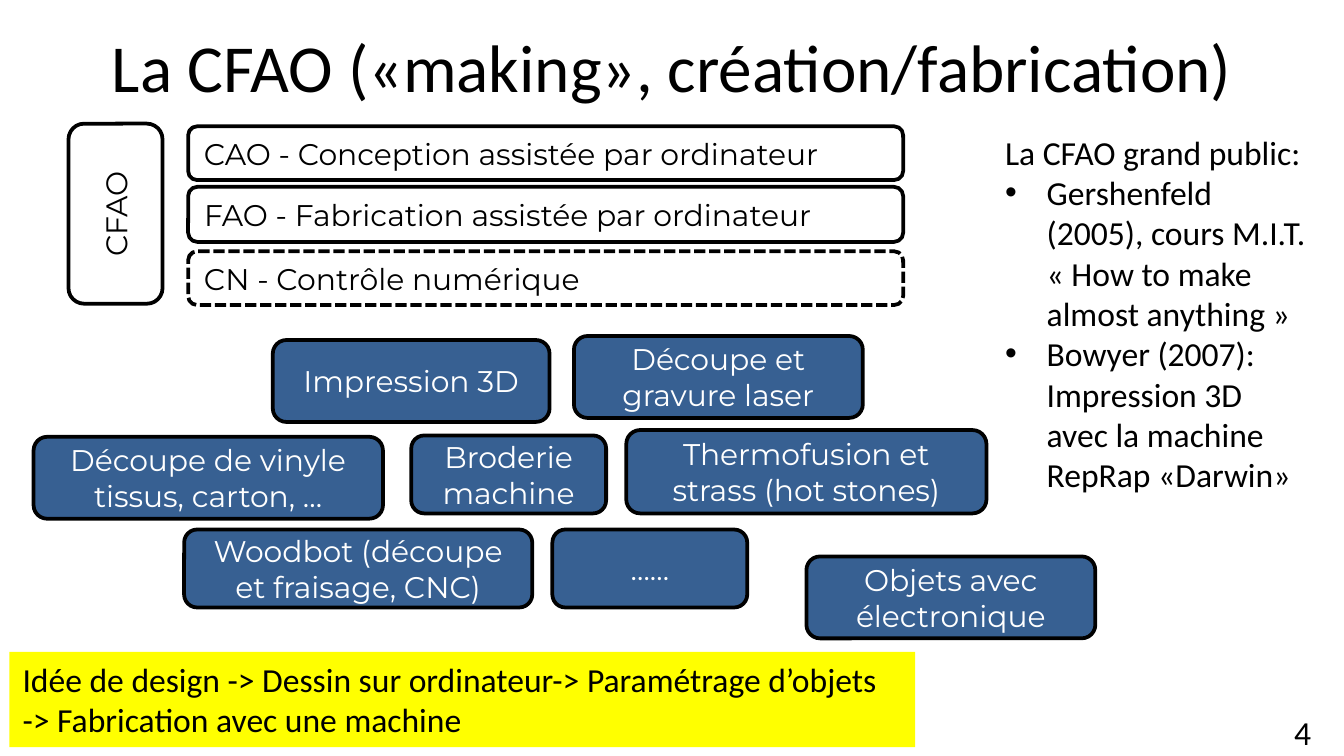
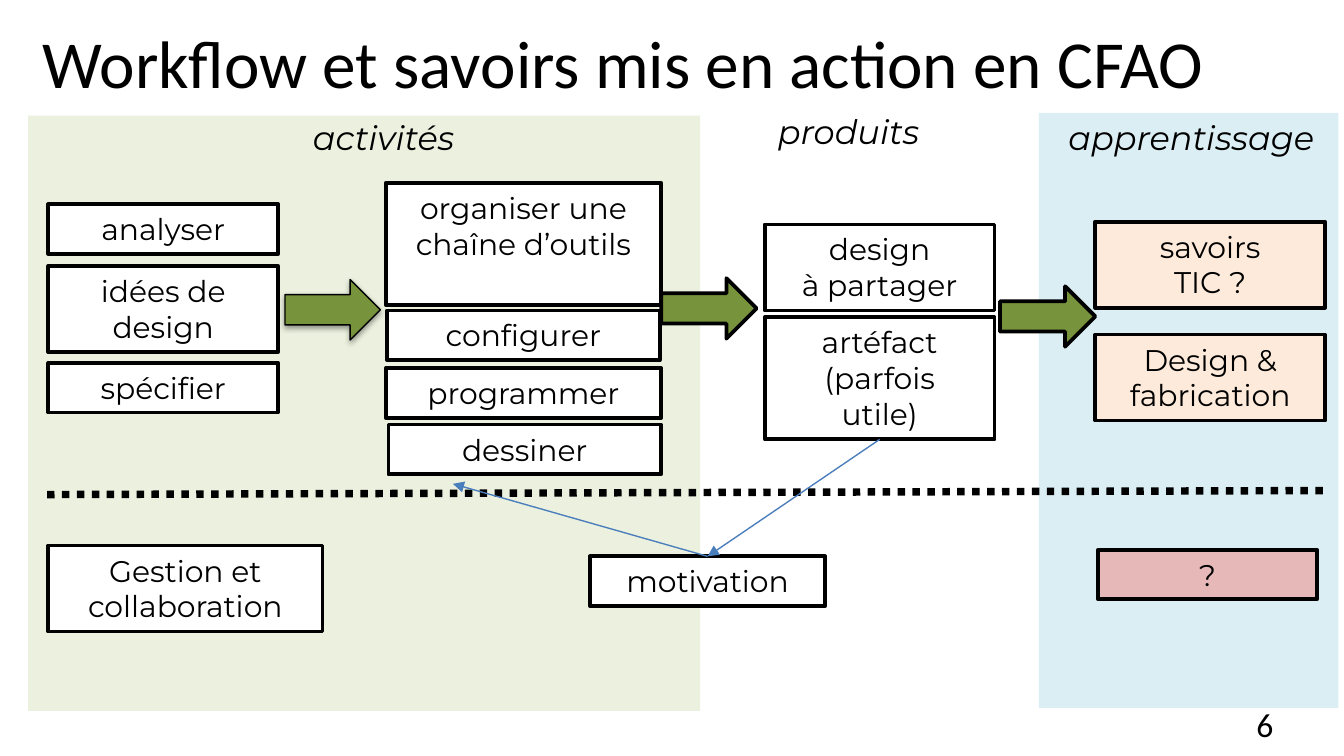
from dataclasses import dataclass

from lxml import etree
from pptx import Presentation
from pptx.dml.color import RGBColor
from pptx.enum.dml import MSO_LINE
from pptx.enum.shapes import MSO_CONNECTOR, MSO_SHAPE
from pptx.enum.text import MSO_ANCHOR, MSO_AUTO_SIZE, PP_ALIGN
from pptx.oxml.ns import qn
from pptx.util import Inches, Pt


@dataclass(frozen=True)
class Theme:
    black: str = "000000"
    white: str = "FFFFFF"
    machine: str = "376092"
    highlight: str = "FFFF00"
    activity_band: str = "EBF1DE"
    learning_band: str = "DBEEF4"
    knowledge: str = "FDEADA"
    question: str = "E6B9B8"
    arrow: str = "77933C"
    link: str = "4B7EBC"
    body_font: str = "Calibri"
    box_font: str = "Montserrat"
    title_size: int = 36
    body_size: int = 18
    box_size: int = 16
    outline: float = 2
    thin: float = 0.75
    divider: float = 4


THEME = Theme()


def color(value):
    return RGBColor.from_string(value)


def write(shape, text, font, size, ink=THEME.black, align=PP_ALIGN.LEFT, italic=None):
    frame = shape.text_frame
    frame.text = text
    for paragraph in frame.paragraphs:
        paragraph.alignment = align
        for run in paragraph.runs:
            run.font.name = font
            run.font.size = Pt(size)
            run.font.italic = italic
            run.font.color.rgb = color(ink)
    return frame


def add_text(slide, at, text, size=THEME.body_size, font=THEME.body_font,
             align=PP_ALIGN.LEFT, italic=None, wrap=True):
    shape = slide.shapes.add_textbox(*map(Inches, at))
    frame = write(shape, text, font, size, align=align, italic=italic)
    frame.word_wrap = wrap
    if not wrap:
        frame.auto_size = MSO_AUTO_SIZE.SHAPE_TO_FIT_TEXT
    return shape


def add_title(slide, left, top, text, align=PP_ALIGN.LEFT):
    add_text(slide, (left, top, 9, 0.62), text, THEME.title_size, align=align)


def add_heading(slide, at, text):
    add_text(slide, at, text, font=THEME.box_font, italic=True, wrap=False)


def add_shape(slide, kind, at, fill, outline=None):
    shape = slide.shapes.add_shape(kind, *map(Inches, at))
    shape.shadow.inherit = False
    shape.fill.solid()
    shape.fill.fore_color.rgb = color(fill)
    if outline:
        shape.line.color.rgb = color(THEME.black)
        shape.line.width = Pt(outline)
    else:
        shape.line.fill.background()
    return shape


def add_rounded_box(slide, at, text, fill=THEME.white, ink=THEME.black,
                    align=PP_ALIGN.CENTER):
    shape = add_shape(slide, MSO_SHAPE.ROUNDED_RECTANGLE, at, fill, THEME.outline)
    frame = write(shape, text, THEME.box_font, THEME.box_size, ink, align)
    frame.vertical_anchor = MSO_ANCHOR.MIDDLE
    return shape


def add_step(slide, at, text, fill=THEME.white):
    shape = add_shape(slide, MSO_SHAPE.RECTANGLE, at, fill, THEME.outline)
    frame = write(shape, text, THEME.box_font, THEME.box_size, align=PP_ALIGN.CENTER)
    frame.margin_left = frame.margin_right = Inches(0.2)
    frame.vertical_anchor = MSO_ANCHOR.TOP
    return shape


def add_block_arrow(slide, left, top, outline=THEME.outline):
    at = (left, top, 0.71, 0.45)
    return add_shape(slide, MSO_SHAPE.RIGHT_ARROW, at, THEME.arrow, outline)


def add_soft_shadow(shape):
    effects = shape._element.spPr.find(qn("a:effectLst"))
    shadow = etree.SubElement(effects, qn("a:outerShdw"), blurRad=str(Pt(3.1)),
                              dist=str(Pt(1.6)), dir="5400000", rotWithShape="0")
    ink = etree.SubElement(shadow, qn("a:srgbClr"), val=THEME.black)
    etree.SubElement(ink, qn("a:alpha"), val="38000")


def add_line(slide, start, end, ink, width):
    line = slide.shapes.add_connector(MSO_CONNECTOR.STRAIGHT,
                                      *map(Inches, (*start, *end)))
    line.line.color.rgb = color(ink)
    line.line.width = Pt(width)
    etree.SubElement(line._element.spPr, qn("a:effectLst"))
    return line


def add_link(slide, start, end):
    link = add_line(slide, start, end, THEME.link, THEME.thin)
    etree.SubElement(link.line._get_or_add_ln(), qn("a:tailEnd"), type="triangle")
    return link


def add_bullet(paragraph):
    properties = paragraph._p.get_or_add_pPr()
    properties.set("marL", str(Inches(0.31)))
    properties.set("indent", str(Inches(-0.31)))
    etree.SubElement(properties, qn("a:buFont"), typeface="Arial")
    etree.SubElement(properties, qn("a:buChar"), char="•")


def build_making(slide):
    add_title(slide, 0.5, 0.14, "La CFAO («making», création/fabrication)",
              PP_ALIGN.CENTER)
    add_text(slide, (9.53, 5.25, 0.39, 0.3), "4")

    stages = [
        (0.94, 0.4, "CAO - Conception assistée par ordinateur"),
        (1.39, 0.41, "FAO - Fabrication assistée par ordinateur"),
        (1.87, 0.4, "CN - Contrôle numérique"),
    ]
    for top, height, text in stages:
        stage = add_rounded_box(slide, (1.4, top, 5.32, height), text,
                                align=PP_ALIGN.LEFT)
    stage.line.dash_style = MSO_LINE.SQUARE_DOT
    add_rounded_box(slide, (0.19, 1.24, 1.34, 0.7), "CFAO").rotation = 270

    machines = [
        ((2.03, 2.53, 2.06, 0.61), "Impression 3D"),
        ((4.27, 2.5, 2.15, 0.61), "Découpe et gravure laser"),
        ((0.25, 3.25, 2.6, 0.61), "Découpe de vinyle\vtissus, carton, …"),
        ((3.06, 3.24, 1.45, 0.58), "Broderie machine"),
        ((4.66, 3.2, 2.68, 0.62), "Thermofusion et strass (hot stones)"),
        ((1.37, 3.94, 2.59, 0.58), "Woodbot (découpe et fraisage, CNC)"),
        ((4.11, 3.94, 1.45, 0.58), "……"),
        ((6, 4.14, 2.15, 0.61), "Objets avec électronique"),
    ]
    for at, text in machines:
        add_rounded_box(slide, at, text, THEME.machine, THEME.white)

    history = add_text(slide, (7.38, 0.93, 2.45, 2.83), "\n".join([
        "La CFAO grand public:",
        "Gershenfeld (2005), cours M.I.T. « How to make almost anything »",
        "Bowyer (2007): Impression 3D avec la machine RepRap «Darwin»",
    ]))
    for paragraph in history.text_frame.paragraphs[1:]:
        add_bullet(paragraph)

    summary = add_shape(slide, MSO_SHAPE.RECTANGLE, (0.07, 4.85, 6.74, 0.71),
                        THEME.highlight)
    frame = write(summary, "Idée de design -> Dessin sur ordinateur-> Paramétrage "
                  "d’objets \v-> Fabrication avec une machine",
                  THEME.body_font, THEME.body_size)
    frame.vertical_anchor = MSO_ANCHOR.TOP


def build_workflow(slide):
    add_shape(slide, MSO_SHAPE.RECTANGLE, (7.73, 0.84, 2.23, 4.43), THEME.learning_band)
    add_shape(slide, MSO_SHAPE.RECTANGLE, (0.21, 0.86, 5, 4.43), THEME.activity_band)
    add_title(slide, 0.22, 0.11, "Workflow et savoirs mis en action en CFAO")
    add_text(slide, (9.25, 5.19, 0.55, 0.3), "6")

    headings = [
        ((2.23, 0.82, 1.41, 0.4), "activités"),
        ((5.69, 0.78, 1.34, 0.4), "produits"),
        ((7.85, 0.82, 2.18, 0.4), "apprentissage"),
    ]
    for at, text in headings:
        add_heading(slide, at, text)

    one_line, two_lines, three_lines = 0.37, 0.64, 0.91
    steps = [
        ((0.36, 1.52, 1.71, one_line), "analyser", THEME.white),
        ((0.36, 1.98, 1.71, two_lines), "idées de design", THEME.white),
        ((0.36, 2.7, 1.71, one_line), "spécifier", THEME.white),
        ((0.36, 4.06, 2.04, two_lines), "Gestion et collaboration", THEME.white),
        ((2.89, 3.16, 2.03, one_line), "dessiner", THEME.white),
        ((2.87, 2.74, 2.05, one_line), "programmer", THEME.white),
        ((2.88, 2.31, 2.03, one_line), "configurer", THEME.white),
        ((2.87, 1.36, 2.05, three_lines), "organiser une chaîne d’outils", THEME.white),
        ((5.69, 1.67, 1.71, two_lines), "design\nà partager", THEME.white),
        ((8.15, 1.65, 1.71, two_lines), "savoirs\nTIC ?", THEME.knowledge),
        ((8.15, 2.49, 1.71, two_lines), "Design & fabrication", THEME.knowledge),
        ((8.17, 4.09, 1.63, one_line), "?", THEME.question),
    ]
    for at, text, fill in steps:
        add_step(slide, at, text, fill)
    artefact = add_step(slide, (5.69, 2.36, 1.71, three_lines),
                        "artéfact (parfois utile)")
    motivation = add_step(slide, (4.39, 4.14, 1.75, one_line), "motivation")

    add_soft_shadow(add_block_arrow(slide, 2.12, 2.08, THEME.thin))
    add_block_arrow(slide, 4.92, 2.07)
    add_block_arrow(slide, 7.44, 2.13)

    divider = add_line(slide, (0.35, 3.68), (9.86, 3.65), THEME.black, THEME.divider)
    divider.line.dash_style = MSO_LINE.ROUND_DOT
    to_motivation = add_link(slide, (6.55, 3.27), (5.27, 4.14))
    to_motivation.begin_connect(artefact, 2)
    to_motivation.end_connect(motivation, 0)
    to_activities = add_link(slide, (5.27, 4.14), (3.37, 3.6))
    to_activities.begin_connect(motivation, 0)


def main():
    presentation = Presentation()
    presentation.slide_width = Inches(10)
    presentation.slide_height = Inches(10 * 9 / 16)
    blank = presentation.slide_layouts[6]
    for build in (build_making, build_workflow):
        build(presentation.slides.add_slide(blank))
    presentation.save("out.pptx")


if __name__ == "__main__":
    main()
